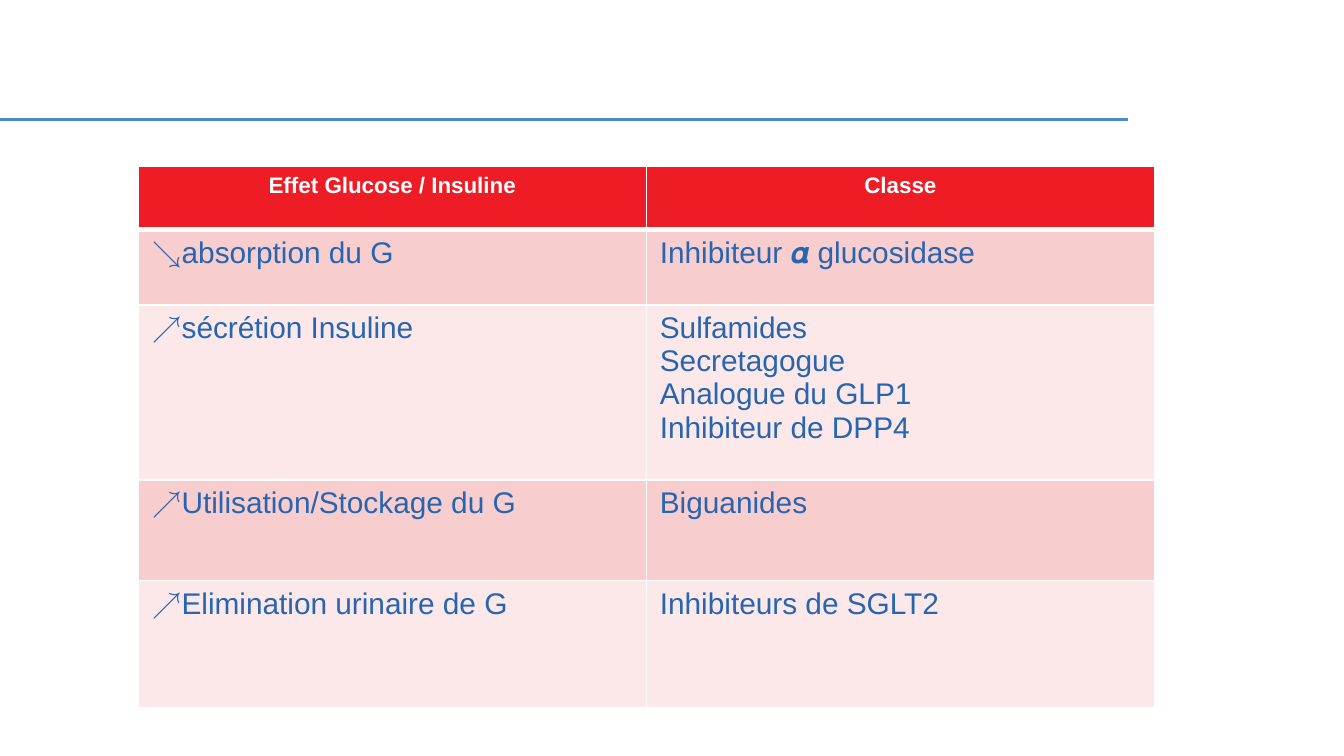
from lxml.etree import SubElement
from pptx import Presentation
from pptx.dml.color import RGBColor
from pptx.enum.shapes import MSO_CONNECTOR
from pptx.enum.text import PP_ALIGN
from pptx.oxml.ns import qn
from pptx.util import Inches, Pt

WHITE, RED, BLUE = "FFFFFF", "EE1C25", "2765B0"
BANDS = ["F8CDCD", "FCE8E8"]
ROW_HEIGHTS = [0.47, 0.56, 1.3, 0.75, 0.95]
COLUMN_WIDTH = 3.78
ROWS = [
    ("Effet Glucose / Insuline", "Classe"),
    ("↘absorption du G", "Inhibiteur 𝜶 glucosidase"),
    ("↗sécrétion Insuline",
     "Sulfamides\nSecretagogue\nAnalogue du GLP1\nInhibiteur de DPP4"),
    ("↗Utilisation/Stockage du G", "Biguanides"),
    ("↗Elimination urinaire de G", "Inhibiteurs de SGLT2"),
]


def color(value):
    return RGBColor.from_string(value)


def add_border(cell, side, width):
    """Draw one white cell edge; side is L, R, T or B."""
    properties = cell._tc.get_or_add_tcPr()
    edge = SubElement(properties, qn(f"a:ln{side}"), w=str(Pt(width)))
    fill = SubElement(edge, qn("a:solidFill"))
    SubElement(fill, qn("a:srgbClr"), val=WHITE)


deck = Presentation()
deck.slide_width = Inches(10)
deck.slide_height = deck.slide_width * 9 // 16
page = deck.slides.add_slide(deck.slide_layouts[6])

rule = page.shapes.add_connector(
    MSO_CONNECTOR.STRAIGHT, Inches(-0.01), Inches(0.89), Inches(8.39), Inches(0.89))
rule.line.color.rgb = color("4A8AD7")
rule.line.width = Pt(1.5)
SubElement(rule._element.spPr, qn("a:effectLst"))

table = page.shapes.add_table(
    len(ROWS), 2, Inches(1.03), Inches(1.24),
    Inches(2 * COLUMN_WIDTH), Inches(sum(ROW_HEIGHTS))).table
for column in table.columns:
    column.width = Inches(COLUMN_WIDTH)

for index, texts in enumerate(ROWS):
    header = index == 0
    table.rows[index].height = Inches(ROW_HEIGHTS[index])
    for cell, text in zip(table.rows[index].cells, texts):
        for side in "LRTB":
            thick = (header and side == "B") or (index == 1 and side == "T")
            add_border(cell, side, 3 if thick else 1)
        cell.fill.solid()
        cell.fill.fore_color.rgb = color(RED if header else BANDS[(index - 1) % 2])
        cell.text = text
        for para in cell.text_frame.paragraphs:
            para.alignment = PP_ALIGN.CENTER if header else PP_ALIGN.LEFT
            para.font.name = "Arial"
            para.font.size = Pt(12 if header else 16)
            para.font.bold = header
            para.font.color.rgb = color(WHITE if header else BLUE)

deck.save("out.pptx")
